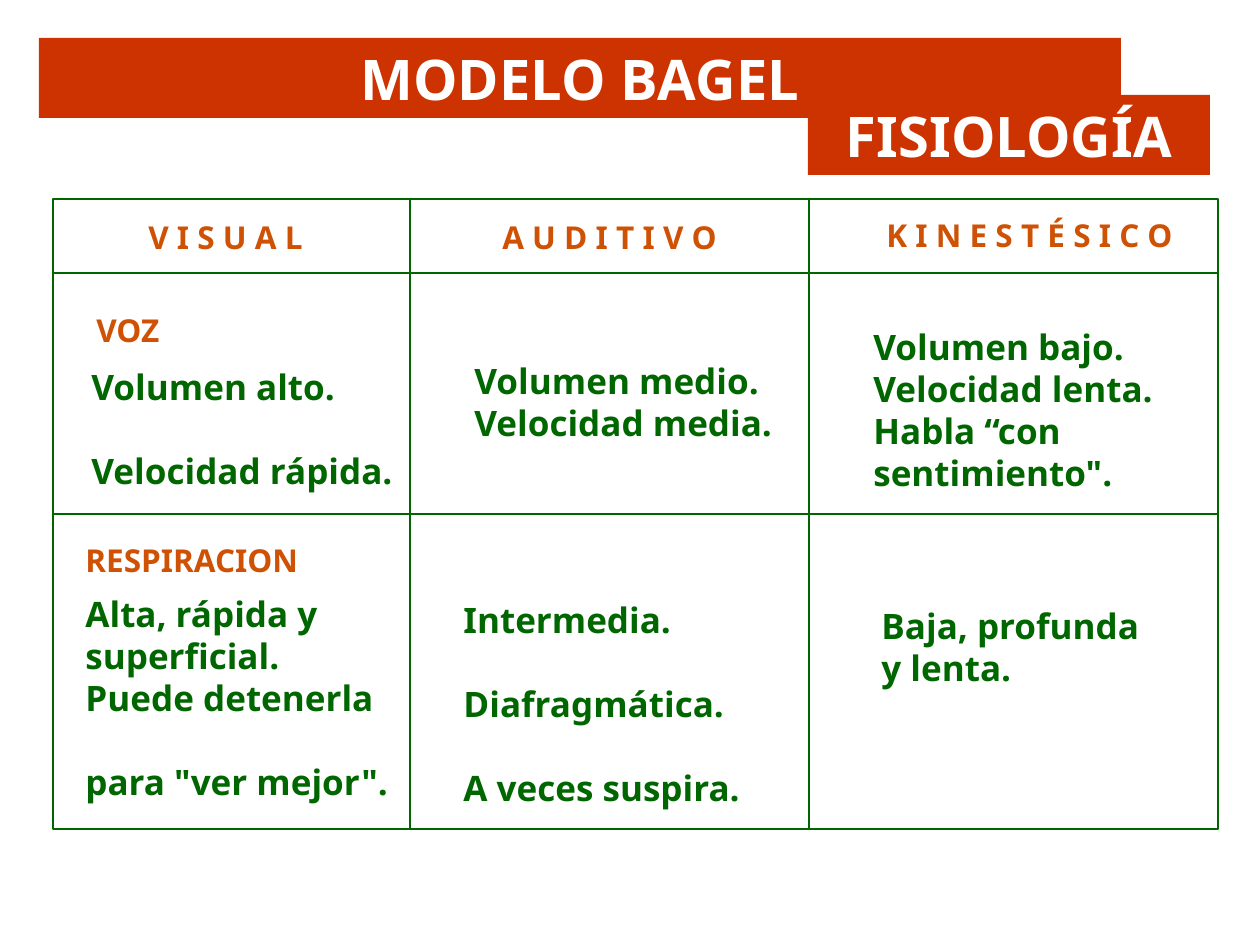
from pptx import Presentation
from pptx.dml.color import RGBColor as RGB
from pptx.enum.shapes import MSO_CONNECTOR as CON, MSO_SHAPE as SHAPE
from pptx.enum.text import MSO_ANCHOR as ANCHOR, MSO_AUTO_SIZE as AUTO, PP_ALIGN as ALIGN
from pptx.oxml.ns import qn
from pptx.util import Emu, Pt
from lxml.etree import SubElement

HUE = {"band": "CC3300", "head": "CE5104", "text": "006600", "white": "FFFFFF"}
FONT = "Noto Sans"
LINE = 24  # one blank line of 20 pt text, in points


def px(n):
    return Emu(round(n * 914400 / 126))


def color(name):
    return RGB.from_string(HUE[name])


def write(frame, lines, size, hue, align=ALIGN.LEFT, gaps=()):
    """Fill a frame; gaps lists the paragraphs that have a line of space above."""
    frame.text = "\n".join(lines)
    frame.word_wrap = True
    frame.auto_size = AUTO.NONE
    frame.vertical_anchor = ANCHOR.TOP
    for i, par in enumerate(frame.paragraphs):
        par.alignment = align
        par.space_before = Pt(LINE if i in gaps else 0)
        for run in par.runs:
            font = run.font
            font.name, font.size, font.bold = FONT, Pt(size), True
            font.color.rgb = color(hue)


def label(slide, box, lines, size=20, hue="text", align=ALIGN.LEFT, gaps=()):
    area = slide.shapes.add_textbox(*map(px, box))
    write(area.text_frame, lines, size, hue, align, gaps)


def rect(slide, box):
    shape = slide.shapes.add_shape(SHAPE.RECTANGLE, *map(px, box))
    shape.shadow.inherit = False
    return shape


def rule(slide, *ends):
    line = slide.shapes.add_connector(CON.STRAIGHT, *map(px, ends))
    line.line.color.rgb = color("text")
    line.line.width = Pt(0.75)
    SubElement(line._element.spPr, qn("a:effectLst"))


def band(shape, text):
    shape.fill.solid()
    shape.fill.fore_color.rgb = color("band")
    shape.line.fill.background()
    write(shape.text_frame, [text], 32, "white", ALIGN.CENTER)


def header(slide):
    title = slide.shapes.title
    title.left, title.top, title.width, title.height = map(px, (39, 38, 1082, 80))
    band(title, "MODELO BAGEL")
    band(rect(slide, (808, 95, 402, 80)), "FISIOLOGÍA")


def frame(slide, box):
    """Outline of one row with its two column rules."""
    x, y, w, h = box
    shape = rect(slide, box)
    shape.fill.background()
    shape.line.color.rgb = color("text")
    shape.line.width = Pt(0.75)
    for dx in (357, 756):
        rule(slide, x + dx, y, x + dx, y + h)


def voice(slide, box):
    x, y, w, h = box
    frame(slide, box)
    # Column heads
    rule(slide, x, y + 74, x + w, y + 74)
    heads = [(20, 13, 305, "V I S U A L"), (378, 13, 357, "A U D I T I V O"),
             (798, 11, 357, "K I N E S T É S I C O")]
    for dx, dy, wide, text in heads:
        label(slide, (x + dx, y + dy, wide, 50), [text], 18, "head", ALIGN.CENTER)
    # Cells
    label(slide, (x + 31, y + 106, 252, 50), ["VOZ"], 18, "head")
    label(slide, (x + 26, y + 160, 343, 135),
          ["Volumen alto.", "Velocidad rápida."], gaps=[1])
    label(slide, (x + 409, y + 154, 454, 97), ["Volumen medio.", "Velocidad media."])
    label(slide, (x + 808, y + 120, 401, 180),
          ["Volumen bajo.", "Velocidad lenta.", "Habla “con", "sentimiento\"."])


def breath(slide, box):
    x, y, w, h = box
    frame(slide, box)
    label(slide, (x + 20, y + 21, 315, 50), ["RESPIRACION"], 18, "head")
    label(slide, (x + 20, y + 72, 422, 223),
          ["Alta, rápida y", "superficial.", "Puede detenerla", "para \"ver mejor\"."],
          gaps=[3])
    label(slide, (x + 398, y + 78, 412, 223),
          ["Intermedia.", "Diafragmática.", "A veces suspira."], gaps=[1, 2])
    label(slide, (x + 816, y + 84, 422, 139), ["Baja, profunda", "y lenta."])


def main():
    deck = Presentation()
    deck.slide_width, deck.slide_height = px(1260), px(945)
    slide = deck.slides.add_slide(deck.slide_layouts[5])
    header(slide)
    voice(slide, (53, 199, 1165, 315))
    breath(slide, (53, 514, 1165, 315))
    deck.save("out.pptx")


if __name__ == "__main__":
    main()
